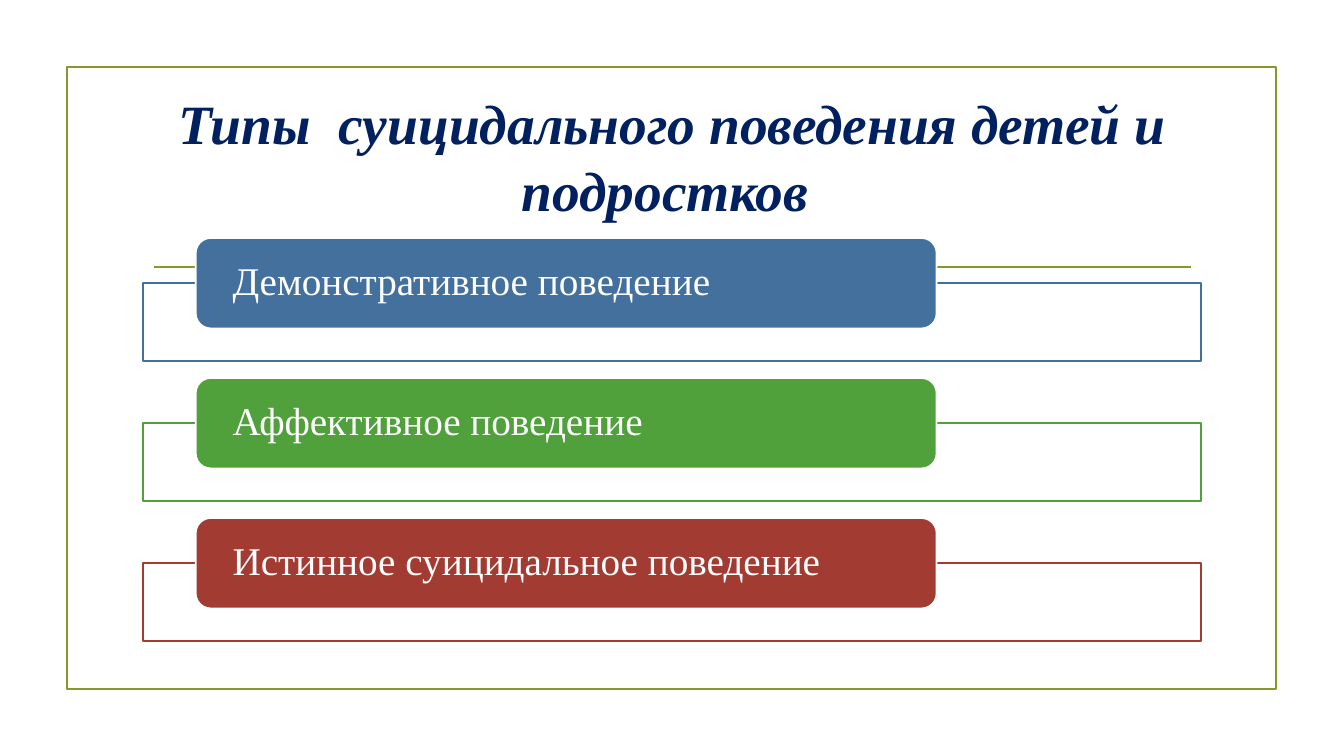
import pptx
import pptx.util
import pptx.dml.color
import pptx.enum.shapes
import pptx.enum.text
import lxml.etree

Pt = pptx.util.Pt
RGBColor = pptx.dml.color.RGBColor
SHAPE = pptx.enum.shapes.MSO_SHAPE
ALIGN = pptx.enum.text.PP_ALIGN
ANCHOR = pptx.enum.text.MSO_ANCHOR

OLIVE = RGBColor(0x83, 0x99, 0x2A)
NAVY = RGBColor(0x00, 0x20, 0x60)
BLUE = RGBColor(0x44, 0x70, 0x9D)
GREEN = RGBColor(0x50, 0xA0, 0x3B)
RED = RGBColor(0xA2, 0x3C, 0x33)
WHITE = RGBColor(0xFF, 0xFF, 0xFF)
LINE_WIDTH = Pt(1.25)


def add_box(kind, left, top, width, height, fill, line):
    sp = s.shapes.add_shape(kind, Pt(left), Pt(top), Pt(width), Pt(height))
    sp.shadow.inherit = False
    sp.fill.solid()
    sp.fill.fore_color.rgb = fill
    sp.line.color.rgb = line
    sp.line.width = LINE_WIDTH
    return sp


def write_text(sp, text, color, inset, paragraph_format, font_format):
    tf = sp.text_frame
    frame_format = {"word_wrap": True, "vertical_anchor": ANCHOR.MIDDLE,
                    "margin_left": Pt(inset), "margin_right": Pt(inset),
                    "margin_top": 0, "margin_bottom": 0}
    p = tf.paragraphs[0]
    r = p.add_run()
    r.text = text
    r.font.color.rgb = color
    r.font.name = "Times New Roman"
    for target, values in ((tf, frame_format), (p, paragraph_format), (r.font, font_format)):
        for name, value in values.items():
            setattr(target, name, value)


prs = pptx.Presentation()
prs.slide_width = Pt(960)
prs.slide_height = Pt(540)
s = prs.slides.add_slide(prs.slide_layouts[6])

add_box(SHAPE.RECTANGLE, 47.7, 48, 864, 444.2, WHITE, OLIVE)

rule = s.shapes.add_connector(pptx.enum.shapes.MSO_CONNECTOR.STRAIGHT,
                              Pt(110), Pt(190.7), Pt(850.5), Pt(190.7))
rule.line.color.rgb = OLIVE
rule.line.width = LINE_WIDTH
lxml.etree.SubElement(rule._element.spPr, pptx.oxml.ns.qn("a:effectLst"))

title = s.shapes.add_textbox(Pt(102), Pt(77), Pt(756), Pt(68.5))
write_text(title, "Типы  суицидального поведения детей и подростков ", NAVY, 7.2,
           {"alignment": ALIGN.CENTER},
           {"size": Pt(39.6), "bold": True, "italic": True})

behaviours = [
    ("Демонстративное поведение", BLUE),
    ("Аффективное поведение", GREEN),
    ("Истинное суицидальное поведение", RED),
]
for i, (text, color) in enumerate(behaviours):
    top = 170 + 100 * i
    add_box(SHAPE.RECTANGLE, 102, top + 32.2, 756, 55.6, WHITE, color)
    label = add_box(SHAPE.ROUNDED_RECTANGLE, 139.8, top, 529.2, 64.6, color, WHITE)
    write_text(label, text, WHITE, 23.2,
               {"alignment": ALIGN.LEFT, "line_spacing": 0.9},
               {"size": Pt(28)})

prs.save("out.pptx")
